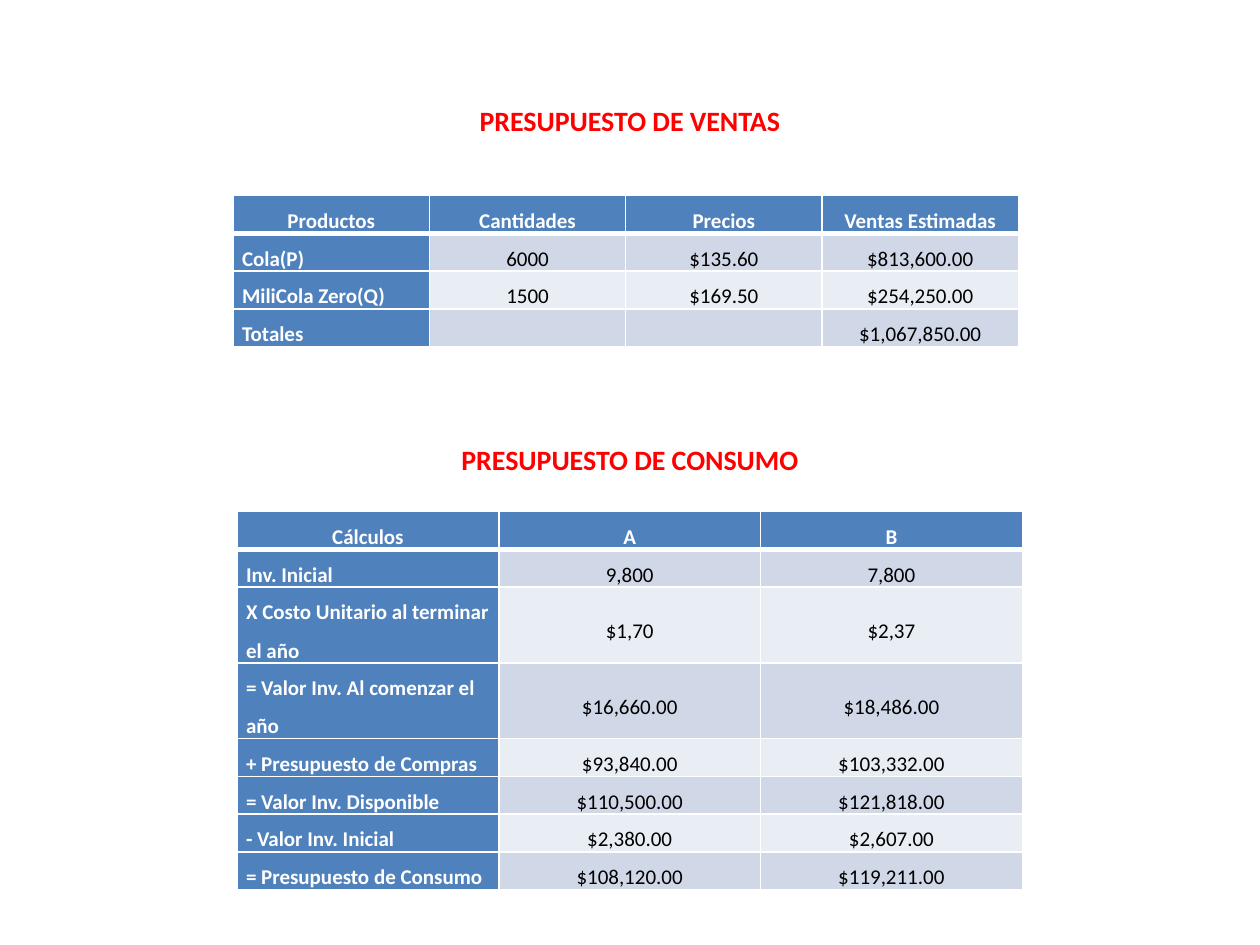
import pptx
import pptx.util
import pptx.dml.color
import pptx.enum.text
import pptx.oxml
import pptx.oxml.ns

Cm = pptx.util.Cm
Pt = pptx.util.Pt
RGBColor = pptx.dml.color.RGBColor
ALIGN = pptx.enum.text.PP_ALIGN
ANCHOR = pptx.enum.text.MSO_ANCHOR

RED = RGBColor(0xFF, 0x00, 0x00)
BLACK = RGBColor(0x00, 0x00, 0x00)
WHITE = RGBColor(0xFF, 0xFF, 0xFF)
BLUE = RGBColor(0x4F, 0x81, 0xBD)
BANDS = [RGBColor(0xD0, 0xD8, 0xE8), RGBColor(0xE9, 0xED, 0xF4)]

ROW_HEIGHT = 0.76
TABLE_WIDTH = 15.83

SALES = [
    ["Productos", "Cantidades", "Precios", "Ventas Estimadas"],
    ["Cola(P)", "6000", "$135.60", "$813,600.00"],
    ["MiliCola Zero(Q)", "1500", "$169.50", "$254,250.00"],
    ["Totales", "", "", "$1,067,850.00"],
]
CONSUMPTION = [
    ["Cálculos", "A", "B"],
    ["Inv. Inicial", "9,800", "7,800"],
    ["X Costo Unitario al terminar el año", "$1,70", "$2,37"],
    ["= Valor Inv. Al comenzar el año", "$16,660.00", "$18,486.00"],
    ["+ Presupuesto de Compras", "$93,840.00", "$103,332.00"],
    ["= Valor Inv. Disponible", "$110,500.00", "$121,818.00"],
    ["- Valor Inv. Inicial", "$2,380.00", "$2,607.00"],
    ["= Presupuesto de Consumo", "$108,120.00", "$119,211.00"],
]


def apply(target, values):
    for name, value in values.items():
        setattr(target, name, value)


class BudgetSlide:
    heading_font = {"name": "Calibri", "size": Pt(16), "bold": True}
    cell_font = {"name": "Calibri", "size": Pt(12)}
    cell_margins = {"margin_left": Cm(0.18), "margin_right": Cm(0.18),
                    "margin_top": 0, "margin_bottom": 0}
    heading_frame = {"word_wrap": True, "vertical_anchor": ANCHOR.TOP,
                     "auto_size": pptx.enum.text.MSO_AUTO_SIZE.SHAPE_TO_FIT_TEXT}

    def __init__(self, slide):
        self.slide = slide

    def add_text(self, paragraph, text, alignment, font, color):
        paragraph.alignment = alignment
        run = paragraph.add_run()
        run.text = text
        apply(run.font, font)
        run.font.color.rgb = color

    def heading(self, shape, text, top):
        apply(shape, {"left": Cm(6.9), "top": Cm(top),
                      "width": Cm(11.6), "height": Cm(0.94)})
        apply(shape.text_frame, self.heading_frame)
        self.add_text(shape.text_frame.paragraphs[0], text, ALIGN.CENTER,
                      self.heading_font, RED)

    def title(self, text, top):
        self.heading(self.slide.shapes.title, text, top)

    def subheading(self, text, top):
        self.heading(self.slide.shapes.add_textbox(0, 0, 0, 0), text, top)

    def borders(self, cell, row):
        properties = cell._tc.get_or_add_tcPr()
        widths = {"lnL": 1, "lnR": 1,
                  "lnT": 3 if row == 1 else 1, "lnB": 3 if row == 0 else 1}
        for side, width in widths.items():
            properties.append(pptx.oxml.parse_xml(
                f'<a:{side} {pptx.oxml.ns.nsdecls("a")} w="{Pt(width)}">'
                f'<a:solidFill><a:srgbClr val="{WHITE}"/></a:solidFill></a:{side}>'))

    def cell(self, cell, text, row, column):
        is_label = row == 0 or column == 0
        self.borders(cell, row)
        apply(cell, self.cell_margins)
        cell.vertical_anchor = ANCHOR.TOP if is_label else ANCHOR.MIDDLE
        cell.fill.solid()
        cell.fill.fore_color.rgb = BLUE if is_label else BANDS[(row - 1) % 2]
        paragraph = cell.text_frame.paragraphs[0]
        paragraph.line_spacing = 1.5
        if text:
            alignment = ALIGN.LEFT if row and column == 0 else ALIGN.CENTER
            self.add_text(paragraph, text, alignment,
                          {**self.cell_font, "bold": is_label},
                          WHITE if is_label else BLACK)
        else:
            paragraph._p.get_or_add_endParaRPr().set("sz", "1200")

    def table(self, rows, left, top, tall_rows=()):
        heights = [ROW_HEIGHT * (2 if row in tall_rows else 1)
                   for row in range(len(rows))]
        table = self.slide.shapes.add_table(
            len(rows), len(rows[0]), Cm(left), Cm(top),
            Cm(TABLE_WIDTH), Cm(sum(heights))).table
        for row, texts in enumerate(rows):
            table.rows[row].height = Cm(heights[row])
            for column, text in enumerate(texts):
                self.cell(table.cell(row, column), text, row, column)


def main():
    presentation = pptx.Presentation()
    apply(presentation, {"slide_width": Cm(25.4), "slide_height": Cm(19.05)})
    budget = BudgetSlide(presentation.slides.add_slide(presentation.slide_layouts[5]))
    budget.title("PRESUPUESTO DE VENTAS", 1.96)
    budget.table(SALES, 4.7, 3.94)
    budget.subheading("PRESUPUESTO DE CONSUMO", 8.79)
    budget.table(CONSUMPTION, 4.78, 10.31, tall_rows=(2, 3))
    presentation.save("out.pptx")


if __name__ == "__main__":
    main()
